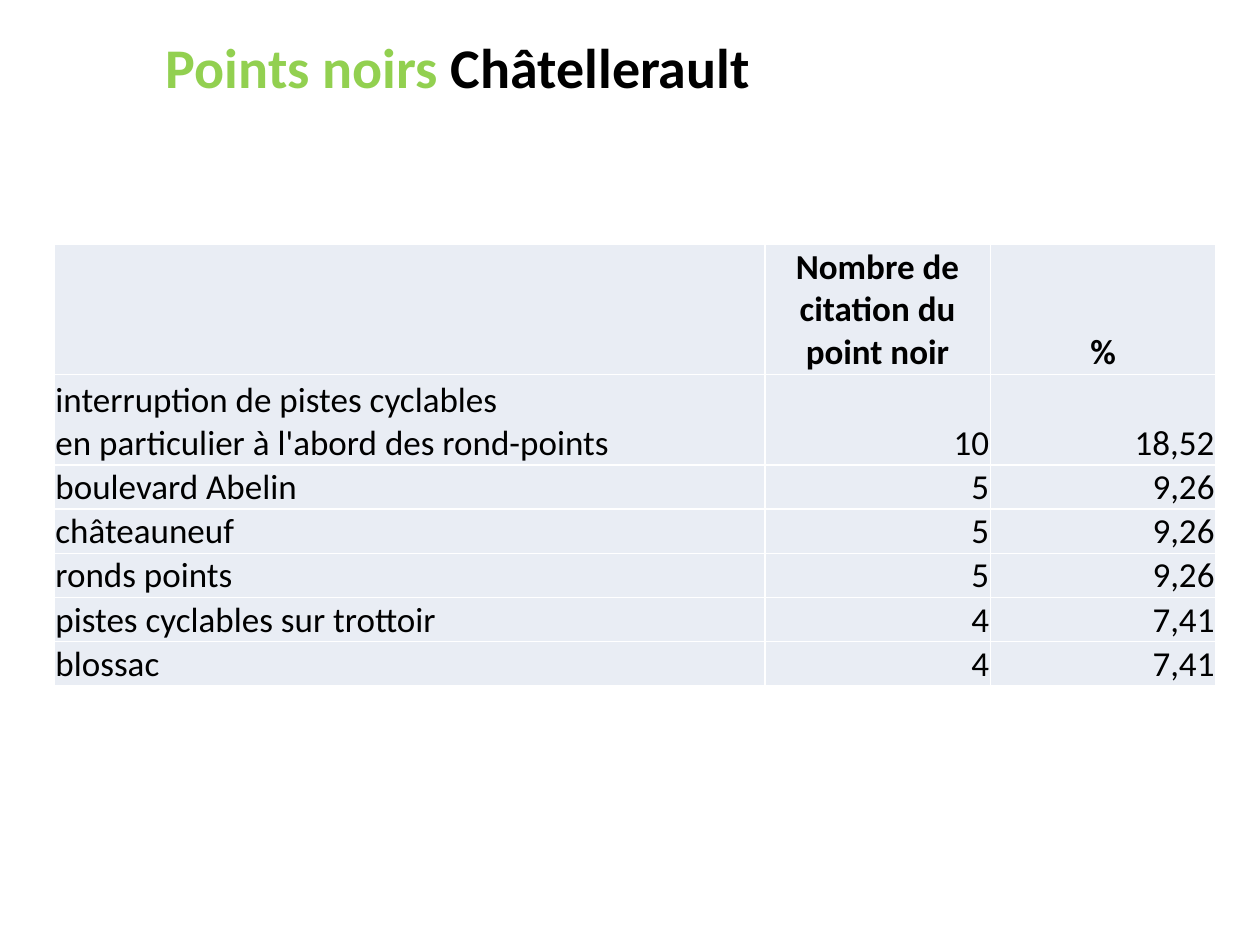
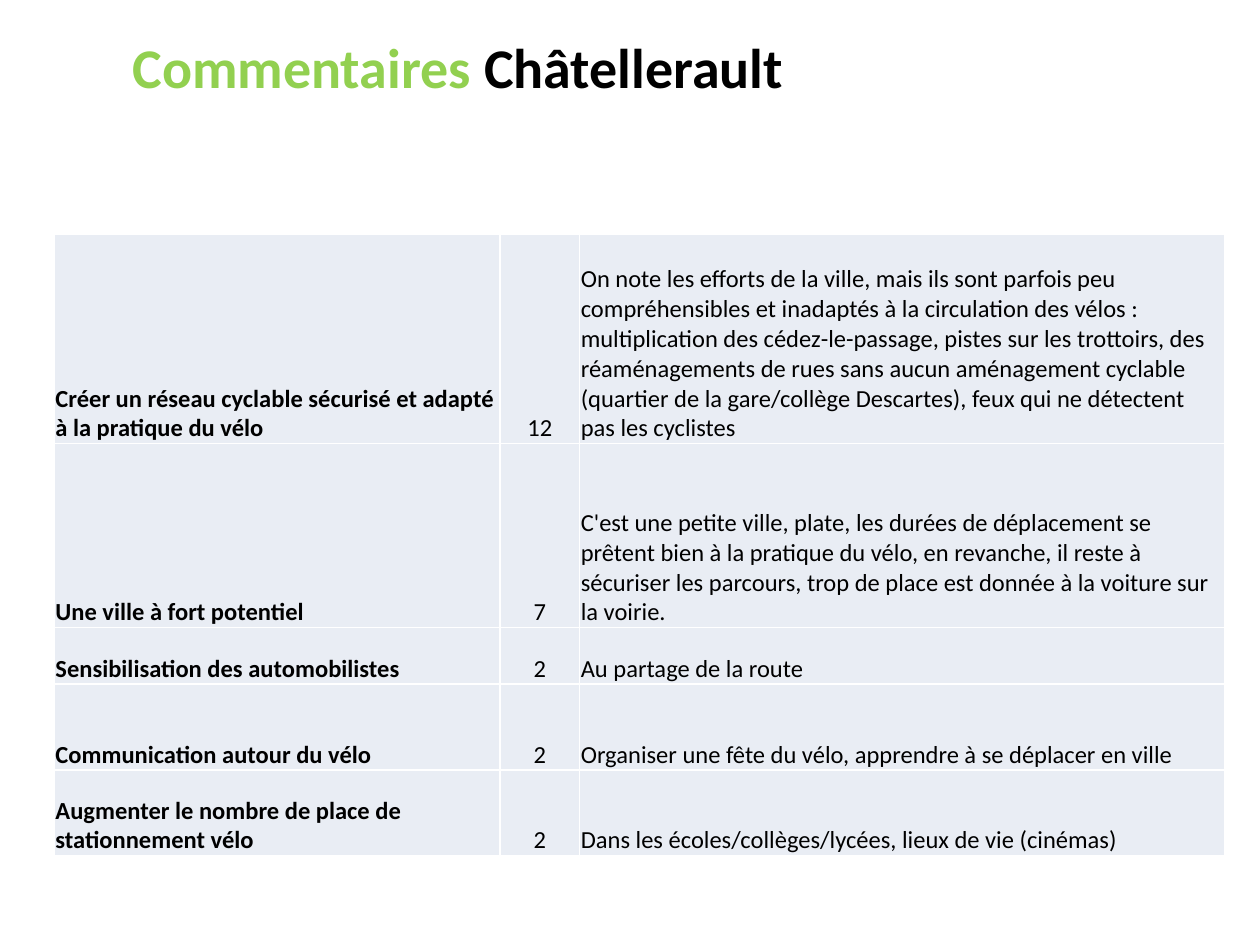
"""Build two slides of cycling survey results for Châtellerault."""
from pptx import Presentation
from pptx.dml.color import RGBColor
from pptx.enum.text import MSO_ANCHOR, PP_ALIGN
from pptx.util import Inches, Pt

FONT = "Calibri"
GREEN, BLACK, PALE_BLUE = "92D050", "000000", "E9EDF4"
LEFT, CENTER, RIGHT = PP_ALIGN.LEFT, PP_ALIGN.CENTER, PP_ALIGN.RIGHT


def color(hex_code):
    """Turn a hex string into a colour."""
    return RGBColor.from_string(hex_code)


def write(paragraph, text, size=20, hex_code=BLACK, bold=False, alignment=LEFT):
    """Add a formatted run to a paragraph."""
    paragraph.alignment = alignment
    run = paragraph.add_run()
    run.text = text
    run.font.name = FONT
    run.font.size = Pt(size)
    run.font.bold = bold
    run.font.color.rgb = color(hex_code)


black_spots = [
    ("", "Nombre de citation du point noir", "%"),
    ("interruption de pistes cyclables\nen particulier à l'abord des rond-points", "10", "18,52"),
    ("boulevard Abelin", "5", "9,26"),
    ("châteauneuf", "5", "9,26"),
    ("ronds points", "5", "9,26"),
    ("pistes cyclables sur trottoir", "4", "7,41"),
    ("blossac", "4", "7,41"),
]
comments = [
    ("Créer un réseau cyclable sécurisé et adapté à la pratique du vélo", "12",
     "On note les efforts de la ville, mais ils sont parfois peu compréhensibles et inadaptés "
     "à la circulation des vélos : multiplication des cédez-le-passage, pistes sur les "
     "trottoirs, des réaménagements de rues sans aucun aménagement cyclable (quartier de la "
     "gare/collège Descartes), feux qui ne détectent pas les cyclistes"),
    ("Une ville à fort potentiel", "7",
     "C'est une petite ville, plate, les durées de déplacement se prêtent bien à la pratique "
     "du vélo, en revanche, il reste à sécuriser les parcours, trop de place est donnée à la "
     "voiture sur la voirie."),
    ("Sensibilisation des automobilistes", "2", "Au partage de la route"),
    ("Communication autour du vélo", "2",
     "Organiser une fête du vélo, apprendre à se déplacer en ville"),
    ("Augmenter le nombre de place de stationnement vélo", "2",
     "Dans les écoles/collèges/lycées, lieux de vie (cinémas)"),
]
pages = [
    dict(topic="Points noirs ", rows=black_spots, top=1.94, size=20, has_header=True,
         widths=[5.64, 1.79, 1.79], heights=[1.03, 0.72] + [0.35] * 5,
         alignments=[LEFT, RIGHT, RIGHT]),
    dict(topic="Commentaires ", rows=comments, top=1.86, size=14, has_header=False,
         widths=[3.54, 0.63, 5.12], heights=[1.66, 1.46, 0.45, 0.68, 0.68],
         alignments=[LEFT, CENTER, LEFT]),
]

presentation = Presentation()
presentation.slide_width, presentation.slide_height = Inches(10), Inches(7.5)

for page in pages:
    slide = presentation.slides.add_slide(presentation.slide_layouts[5])
    title = slide.shapes.title
    title.left, title.top = Inches(0.06), Inches(0.18)
    title.width, title.height = Inches(7.15), Inches(0.69)
    title.text_frame.vertical_anchor = MSO_ANCHOR.MIDDLE
    for text, hex_code in ((page["topic"], GREEN), ("Châtellerault", BLACK)):
        write(title.text_frame.paragraphs[0], text, size=32, hex_code=hex_code,
              bold=True, alignment=CENTER)

    widths, heights = page["widths"], page["heights"]
    table = slide.shapes.add_table(
        len(heights), len(widths), Inches(0.43), Inches(page["top"]),
        Inches(sum(widths)), Inches(sum(heights))).table
    table.first_row = table.horz_banding = False
    for column, width in zip(table.columns, widths):
        column.width = Inches(width)

    for row_index, (row, height, texts) in enumerate(zip(table.rows, heights, page["rows"])):
        row.height = Inches(height)
        is_header = page["has_header"] and row_index == 0
        for column_index, (cell, text) in enumerate(zip(row.cells, texts)):
            cell.fill.solid()
            cell.fill.fore_color.rgb = color(PALE_BLUE)
            cell.vertical_anchor = MSO_ANCHOR.BOTTOM
            cell.margin_left = cell.margin_right = cell.margin_top = Inches(0.01)
            cell.margin_bottom = 0
            is_label = not page["has_header"] and column_index == 0
            for line_index, line in enumerate(text.splitlines()):
                frame = cell.text_frame
                paragraph = frame.add_paragraph() if line_index else frame.paragraphs[0]
                write(paragraph, line, size=page["size"], bold=is_header or is_label,
                      alignment=CENTER if is_header else page["alignments"][column_index])

presentation.save("out.pptx")
